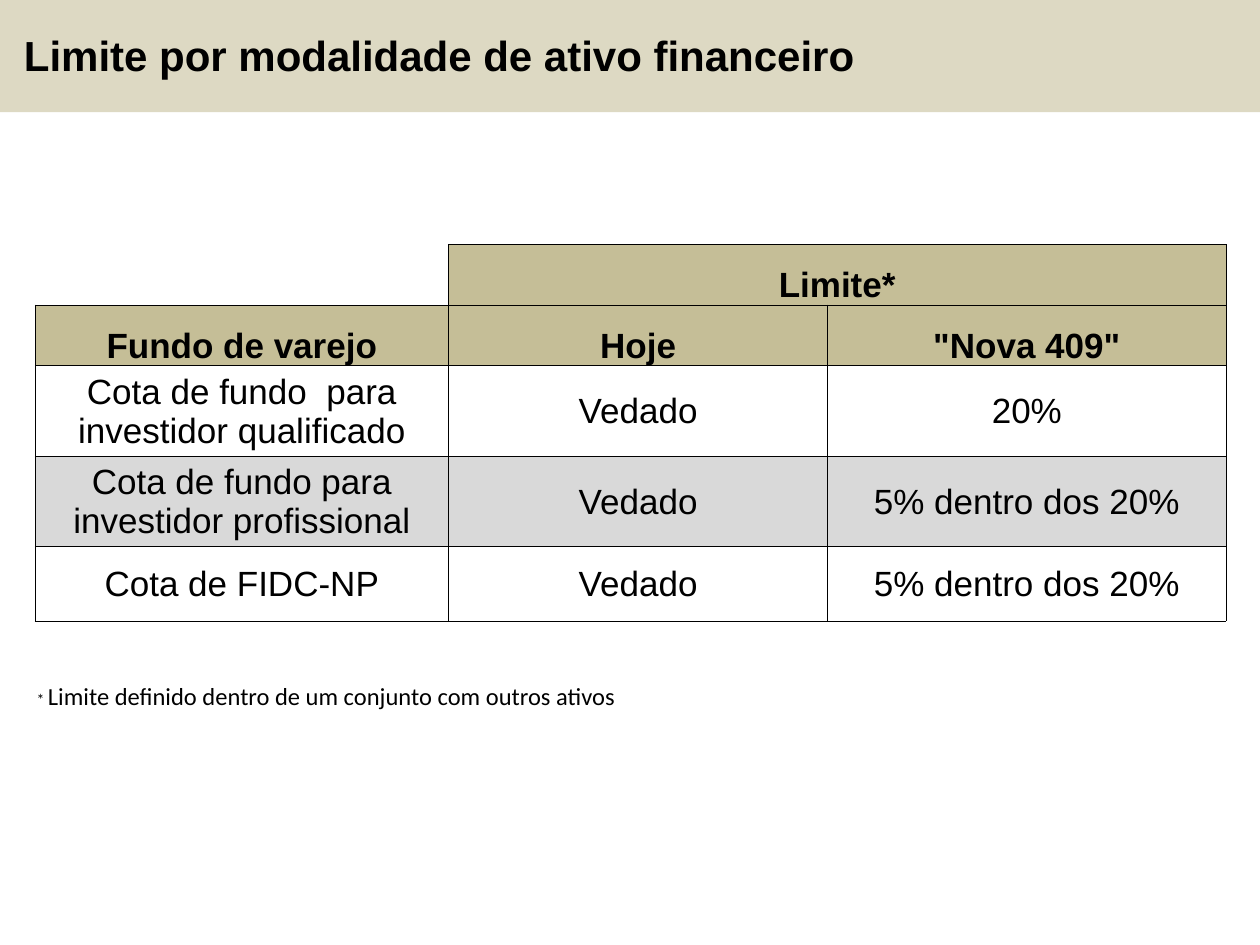
import pptx
import pptx.util
import pptx.dml.color
import pptx.enum.shapes
import pptx.enum.text
import lxml.etree

ALIGN = pptx.enum.text.PP_ALIGN
ANCHOR = pptx.enum.text.MSO_ANCHOR
HUES = {"ink": "000000", "band": "DDD9C3", "head": "C5BE97", "gray": "D9D9D9"}
COLS = [32.8, 30.1, 31.6]
ROWS = [4.8, 4.8, 7.2, 7.2, 5.9, 7.2, 4.8]
TEXTS = [
    ["", "Limite*", ""],
    ["Fundo de varejo", "Hoje", '"Nova 409"'],
    ["Cota de fundo  para investidor qualificado", "Vedado", "20%"],
    ["Cota de fundo para investidor profissional", "Vedado", "5% dentro dos 20%"],
    ["Cota de FIDC-NP", "Vedado", "5% dentro dos 20%"],
]
FILLS = {0: "head", 1: "head", 3: "gray"}


def boxed(row, col):
    """Tell whether a grid place belongs to the ruled part of the table."""
    return 0 <= col < 3 and (1 <= row <= 4 or (row == 0 and col > 0))


class Deck:
    """Holds the style and the current slide on a grid of 100 columns by 75 rows."""

    def __init__(self):
        """Open a blank slide of 10 by 7.5 inches."""
        self.show = pptx.Presentation()
        self.show.slide_width = pptx.util.Inches(10)
        self.show.slide_height = pptx.util.Inches(7.5)
        self.unit = self.show.slide_width / 100
        self.slide = self.show.slides.add_slide(self.show.slide_layouts[6])

    def span(self, *vals):
        """Turn grid units into lengths."""
        return [pptx.util.Emu(round(val * self.unit)) for val in vals]

    def hue(self, name):
        """Give the named colour."""
        return pptx.dml.color.RGBColor.from_string(HUES[name])

    def label(self, para, text, size, **form):
        """Add a run of text in the given format."""
        run = para.add_run()
        run.text = text
        form = {"name": "Arial", "bold": False, "size": pptx.util.Pt(size), **form}
        for key, val in form.items():
            setattr(run.font, key, val)
        run.font.color.rgb = self.hue("ink")

    def banner(self, text, *place):
        """Draw the title band."""
        box = self.slide.shapes.add_shape(
            pptx.enum.shapes.MSO_SHAPE.RECTANGLE, *self.span(*place))
        box.shadow.inherit = False
        box.fill.solid()
        box.fill.fore_color.rgb = self.hue("band")
        box.line.fill.background()
        frame = box.text_frame
        form = {"word_wrap": True, "vertical_anchor": ANCHOR.MIDDLE,
                "margin_left": self.span(1.9)[0]}
        for key, val in form.items():
            setattr(frame, key, val)
        para = frame.paragraphs[0]
        para.alignment = ALIGN.LEFT
        para.space_after = pptx.util.Pt(2)
        self.label(para, text, 24, bold=True)

    def grid(self, left, top, cols, rows):
        """Add a plain table with the given column and row sizes."""
        table = self.slide.shapes.add_table(
            len(rows), len(cols), *self.span(left, top, sum(cols), sum(rows))).table
        table.first_row = table.horz_banding = False
        for col, wide in zip(table.columns, self.span(*cols)):
            col.width = wide
        for row, high in zip(table.rows, self.span(*rows)):
            row.height = high
        return table

    def edge(self, cell, side, drawn):
        """Draw or clear one border of a cell."""
        ns = "{http://schemas.openxmlformats.org/drawingml/2006/main}"
        props = cell._tc.get_or_add_tcPr()
        line = lxml.etree.SubElement(props, ns + "ln" + side, w="6350")
        if drawn:
            fill = lxml.etree.SubElement(line, ns + "solidFill")
            lxml.etree.SubElement(fill, ns + "srgbClr", val=HUES["ink"])
        else:
            lxml.etree.SubElement(line, ns + "noFill")

    def cell(self, table, row, col, fill=None, anchor=ANCHOR.MIDDLE):
        """Set the borders, fill and margins of a cell and return its paragraph."""
        cell = table.cell(row, col)
        near = {"L": (row, col - 1), "R": (row, col + 1),
                "T": (row - 1, col), "B": (row + 1, col)}
        for side, spot in near.items():
            self.edge(cell, side, boxed(row, col) or boxed(*spot))
        if fill:
            cell.fill.solid()
            cell.fill.fore_color.rgb = self.hue(fill)
        else:
            cell.fill.background()
        slim = self.span(0.1)[0]
        form = {"vertical_anchor": anchor, "margin_left": slim, "margin_right": slim,
                "margin_top": slim, "margin_bottom": 0}
        for key, val in form.items():
            setattr(cell, key, val)
        return cell.text_frame.paragraphs[0]


def main():
    """Build the slide and save it."""
    deck = Deck()
    deck.banner("Limite por modalidade de ativo financeiro", 0, -0.3, 100, 9.2)
    table = deck.grid(2.8, 19.4, COLS, ROWS)
    table.cell(0, 1).merge(table.cell(0, 2))
    table.cell(5, 0).merge(table.cell(5, 1))
    for row in range(len(ROWS)):
        head = row < 2
        for col in range(len(COLS)):
            fill = FILLS.get(row) if boxed(row, col) else None
            anchor = ANCHOR.BOTTOM if head or row == 5 else ANCHOR.MIDDLE
            para = deck.cell(table, row, col, fill, anchor)
            if row < len(TEXTS) and TEXTS[row][col]:
                para.alignment = ALIGN.CENTER
                deck.label(para, TEXTS[row][col], 20, bold=head)
    note = table.cell(5, 0).text_frame.paragraphs[0]
    deck.label(note, "* ", 9, name="Calibri")
    deck.label(note, "Limite definido dentro de um conjunto com outros ativos", 14,
               name="Calibri")
    deck.show.save("out.pptx")


if __name__ == "__main__":
    main()
